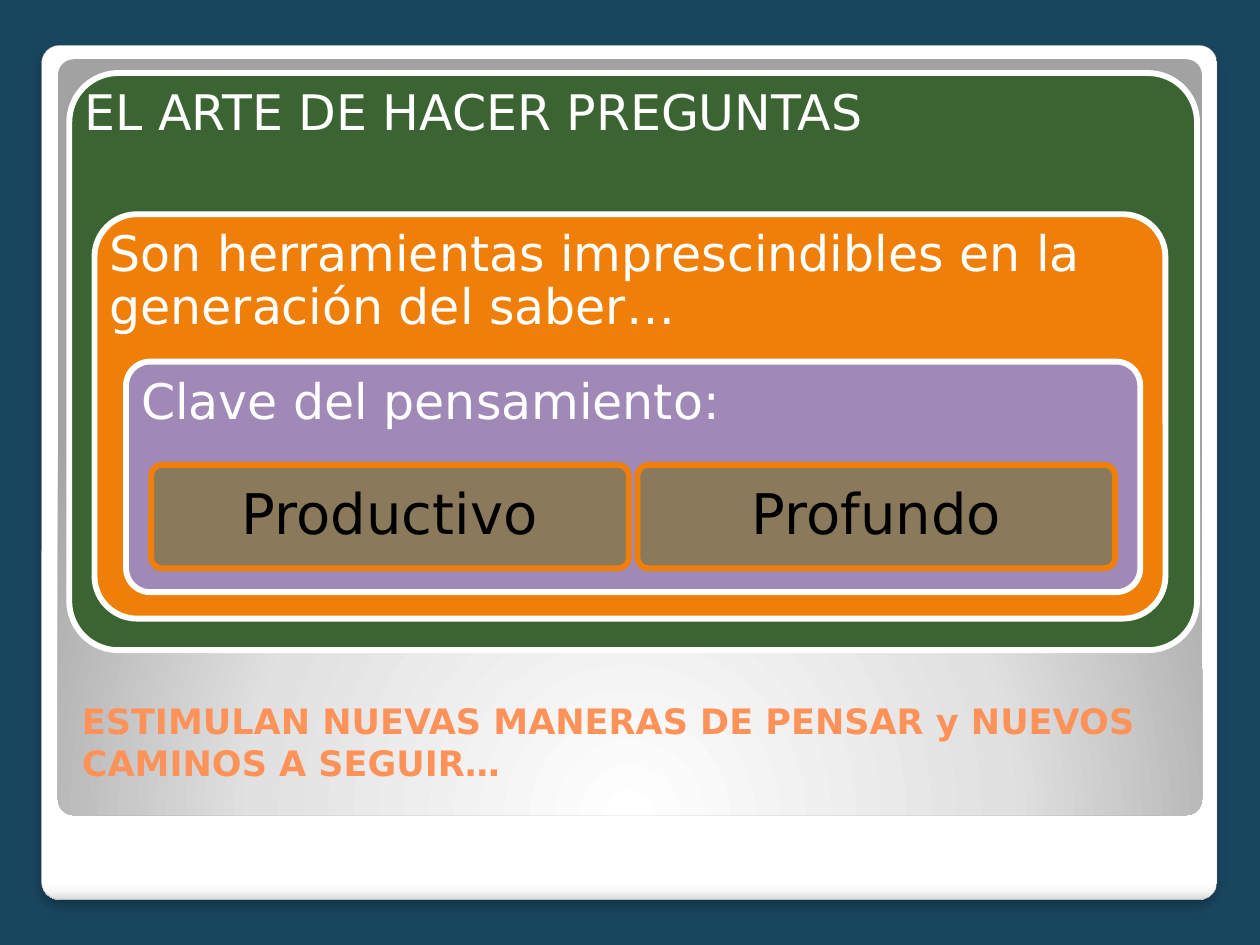
from dataclasses import dataclass

from lxml.etree import SubElement
from pptx import Presentation
from pptx.dml.color import RGBColor
from pptx.enum.shapes import MSO_SHAPE as Shape
from pptx.enum.text import MSO_ANCHOR as Anchor, MSO_AUTO_SIZE as AutoSize, PP_ALIGN as Align
from pptx.oxml import parse_xml
from pptx.oxml.ns import nsdecls, qn
from pptx.util import Inches, Pt


@dataclass(frozen=True)
class Theme:
    """Colours, font and type sizes of the slide."""
    font: str = "DejaVu Sans"
    background: str = "19465F"
    white: str = "FFFFFF"
    black: str = "000000"
    frame_line: str = "A4A4A4"
    title: str = "FF9258"
    green: str = "3B6432"
    orange: str = "F07F09"
    purple: str = "A088B7"
    brown: str = "887952"
    title_size: int = 20
    level_size: int = 28
    key_size: int = 32
    line_width: float = 3.35
    frame_stops: tuple = ((0, "FFFFFF"), (98, "FFFFFF"), (99, "F7F7F7"), (100, "DADADA"))
    panel_stops: tuple = ((0, "FFFFFF"), (55, "E1E1E1"), (100, "A2A2A2"))


THEME = Theme()
CORNER_INSET = 0.29
LINEAR = '<a:lin ang="5400000" scaled="0"/>'
RADIAL = ('<a:path path="circle"><a:fillToRect l="50000" t="175000" '
          'r="50000" b="-75000"/></a:path>')


def write_text(shape, text, size, color, bold=False, align=Align.LEFT,
               anchor=Anchor.TOP, insets=(0.1, 0.05, 0.1, 0.05), spacing=1.0):
    """Write one formatted paragraph into a shape."""
    frame = shape.text_frame
    frame.word_wrap = True
    frame.auto_size = AutoSize.NONE
    frame.vertical_anchor = anchor
    frame.margin_left, frame.margin_top, frame.margin_right, frame.margin_bottom = map(Inches, insets)
    paragraph = frame.paragraphs[0]
    paragraph.alignment = align
    paragraph.line_spacing = spacing
    run = paragraph.add_run()
    run.text = text
    run.font.name = THEME.font
    run.font.size = Pt(size)
    run.font.bold = bold
    run.font.color.rgb = RGBColor.from_string(color)


def add_round_box(slide, box, corner, fill=None, line=None, width=THEME.line_width):
    """Add a rounded rectangle with a plain fill and outline."""
    shape = slide.shapes.add_shape(Shape.ROUNDED_RECTANGLE, *map(Inches, box))
    shape.adjustments[0] = corner
    shape.shadow.inherit = False
    if fill:
        shape.fill.solid()
        shape.fill.fore_color.rgb = RGBColor.from_string(fill)
    if line:
        shape.line.color.rgb = RGBColor.from_string(line)
        shape.line.width = Pt(width)
    else:
        shape.line.fill.background()
    return shape


def set_gradient(shape, stops, direction):
    """Fill a shape with a gradient of several stops."""
    marks = "".join(f'<a:gs pos="{position * 1000}"><a:srgbClr val="{color}"/></a:gs>'
                    for position, color in stops)
    gradient = parse_xml(f'<a:gradFill {nsdecls("a")} rotWithShape="1">'
                         f'<a:gsLst>{marks}</a:gsLst>{direction}</a:gradFill>')
    shape.element.spPr.find(qn("a:prstGeom")).addnext(gradient)


def add_backdrop(slide, box):
    """Draw the white frame and the grey panel inside it."""
    left, top, width, height = box
    frame = add_round_box(slide, box, 0.021, line=THEME.frame_line, width=0.16)
    set_gradient(frame, THEME.frame_stops, LINEAR)
    effects = frame.element.spPr.find(qn("a:effectLst"))
    effects.append(parse_xml(
        f'<a:outerShdw {nsdecls("a")} blurRad="{Pt(6)}" dist="{Pt(4)}" dir="5400000" '
        f'algn="t" rotWithShape="0"><a:srgbClr val="{THEME.black}">'
        '<a:alpha val="25000"/></a:srgbClr></a:outerShdw>'))
    panel = add_round_box(slide, (left + 0.13, top + 0.11, width - 0.25, height - 0.78), 0.021)
    set_gradient(panel, THEME.panel_stops, RADIAL)


def add_title(slide, box, text):
    """Place the title placeholder above the backdrop."""
    title = slide.shapes.title
    title.left, title.top, title.width, title.height = map(Inches, box)
    title.element.getparent().append(title.element)
    write_text(title, text, THEME.title_size, THEME.title, bold=True,
               anchor=Anchor.BOTTOM, insets=(0.1, 0.05, 0.1, 0.38))


def add_level(slide, box, text, fill, corner):
    """Draw one nested level with its heading at the top."""
    level = add_round_box(slide, box, corner, fill, THEME.white)
    inset = 0.12 - CORNER_INSET * corner * box[3]
    write_text(level, text, THEME.level_size, THEME.white, insets=(inset,) * 4, spacing=0.9)


def add_keys(slide, box, labels, gap=0.07):
    """Divide a box into equal key boxes side by side."""
    left, top, width, height = box
    key_width = (width - gap * (len(labels) - 1)) / len(labels)
    for index, label in enumerate(labels):
        key_left = left + index * (key_width + gap)
        key = add_round_box(slide, (key_left, top, key_width, height), 0.105,
                            THEME.brown, THEME.orange)
        color = key.element.spPr.find(qn("a:solidFill")).find(qn("a:srgbClr"))
        SubElement(color, qn("a:alpha")).set("val", "90000")
        write_text(key, label, THEME.key_size, THEME.black, align=Align.CENTER,
                   anchor=Anchor.MIDDLE, insets=(0.1,) * 4, spacing=0.9)


def main():
    """Build and save the slide."""
    presentation = Presentation()
    presentation.slide_width, presentation.slide_height = Inches(10), Inches(7.5)
    slide = presentation.slides.add_slide(presentation.slide_layouts[5])
    slide.background.fill.solid()
    slide.background.fill.fore_color.rgb = RGBColor.from_string(THEME.background)
    add_backdrop(slide, (0.33, 0.36, 9.33, 6.78))
    add_title(slide, (0.55, 5.45, 8.95, 1.15),
              "ESTIMULAN NUEVAS MANERAS DE PENSAR y NUEVOS CAMINOS A SEGUIR…")
    levels = (
        ((0.55, 0.58, 8.95, 4.58), "EL ARTE DE HACER PREGUNTAS", THEME.green, 0.085),
        ((0.75, 1.7, 8.5, 3.21), "Son herramientas imprescindibles en la generación del saber…",
         THEME.orange, 0.105),
        ((1, 2.87, 8.05, 1.83), "Clave del pensamiento:", THEME.purple, 0.105),
    )
    for level in levels:
        add_level(slide, *level)
    add_keys(slide, (1.2, 3.69, 7.65, 0.82), ("Productivo", "Profundo"))
    presentation.save("out.pptx")


if __name__ == "__main__":
    main()
